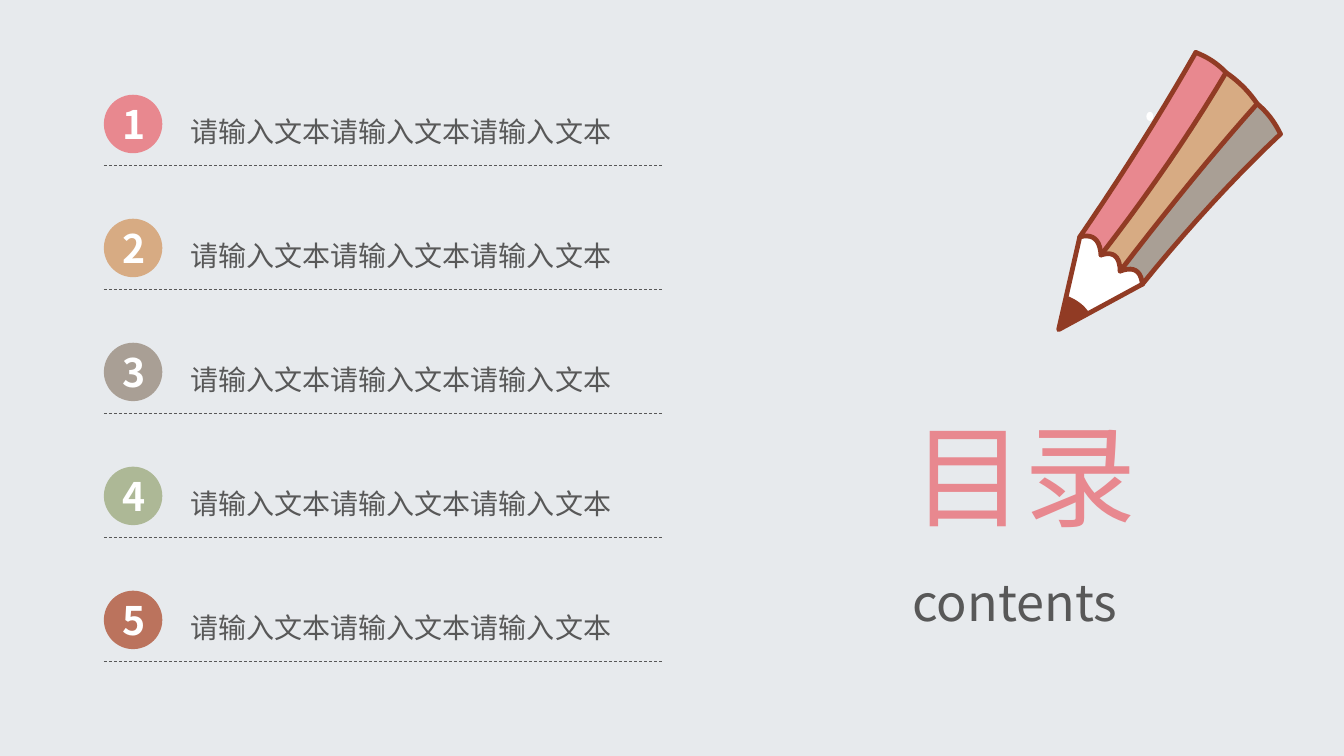
import pptx
import pptx.util
import pptx.dml.color
import pptx.enum.dml
import pptx.enum.shapes
import pptx.enum.text
import pptx.oxml
import pptx.oxml.ns

Inches, Pt = pptx.util.Inches, pptx.util.Pt
RGBColor = pptx.dml.color.RGBColor
PP_ALIGN = pptx.enum.text.PP_ALIGN
ANCHOR = pptx.enum.text.MSO_ANCHOR
OVAL = pptx.enum.shapes.MSO_SHAPE.OVAL

PINK = RGBColor(0xE8, 0x88, 0x8F)
TAN = RGBColor(0xD7, 0xAB, 0x83)
TAUPE = RGBColor(0xA9, 0x9F, 0x95)
SAGE = RGBColor(0xAD, 0xB8, 0x96)
BRICK = RGBColor(0xBB, 0x73, 0x5D)
BROWN = RGBColor(0x91, 0x3B, 0x24)
WHITE = RGBColor(0xFF, 0xFF, 0xFF)
GRAY = RGBColor(0x58, 0x58, 0x58)
PAPER = RGBColor(0xE7, 0xEA, 0xED)
FONT = "Noto Sans CJK SC"

# Content: headings are (text, top, height, size, colour)
headings = [("目录", 3.98, 1.45, 80, PINK), ("contents", 5.62, 0.71, 36, GRAY)]
entry_text = "请输入文本请输入文本请输入文本"
entry_colors = [PINK, TAN, TAUPE, SAGE, BRICK]

# Pencil: each long edge runs from foot through a bend to the end
side_colors = [PINK, TAN, TAUPE]
long_edges = [
    [(10.71, 2.35), (11.36, 1.4), (11.86, 0.52)],
    [(10.92, 2.53), (11.64, 1.6), (12.16, 0.72)],
    [(11.11, 2.69), (11.87, 1.7), (12.47, 1.03)],
    [(11.33, 2.82), (12.02, 1.97), (12.7, 1.33)],
]
tip = (10.5, 3.27)
lead_edge = [(10.57, 2.93), (10.73, 2.99), (10.8, 3.1)]
SCALLOP_BULGE = (0.09, -0.14)
CAP_BULGE = (0.03, -0.03)
OUTLINE_WIDTH = 3.4
CURVE_STEPS = 10

# Agenda layout
ROW_TOP, ROW_STEP = 0.94, 1.23
BADGE_LEFT, BADGE_SIZE = 1.03, 0.58
RULE_DROP, RULE_RIGHT = 0.7, 6.58


def write(frame, text, size, color, align, bold=False):
    frame.word_wrap = True
    paragraph = frame.paragraphs[0]
    paragraph.text = text
    paragraph.alignment = align
    font = paragraph.font
    font.size, font.bold = Pt(size), bold
    font.color.rgb = color
    font.name = FONT
    # East Asian glyphs need their own font entry
    defaults = paragraph._p.pPr.find(pptx.oxml.ns.qn("a:defRPr"))
    defaults.append(pptx.oxml.parse_xml(
        f'<a:ea {pptx.oxml.ns.nsdecls("a")} typeface="{FONT}"/>'))
    return paragraph


def add_text(slide, box, text, size, color):
    frame = slide.shapes.add_textbox(*map(Inches, box)).text_frame
    frame.auto_size = pptx.enum.text.MSO_AUTO_SIZE.SHAPE_TO_FIT_TEXT
    return frame, write(frame, text, size, color, PP_ALIGN.JUSTIFY)


def paint(shape, color):
    shape.shadow.inherit = False
    shape.fill.solid()
    shape.fill.fore_color.rgb = color
    shape.line.fill.background()


def add_entry(slide, number, top, text, color):
    frame, paragraph = add_text(slide, (1.79, top, 4.43, 0.55), text, 20, GRAY)
    frame.vertical_anchor = ANCHOR.MIDDLE
    paragraph.line_spacing = 1.5

    rule_y = Inches(top + RULE_DROP)
    rule = slide.shapes.add_connector(pptx.enum.shapes.MSO_CONNECTOR.STRAIGHT,
                                      Inches(BADGE_LEFT), rule_y, Inches(RULE_RIGHT), rule_y)
    rule.line.color.rgb = GRAY
    rule.line.width = Pt(0.5)
    rule.line.dash_style = pptx.enum.dml.MSO_LINE.DASH
    rule._element.spPr.append(pptx.oxml.parse_xml(
        f'<a:effectLst {pptx.oxml.ns.nsdecls("a")}/>'))

    badge = slide.shapes.add_shape(
        OVAL, *map(Inches, (BADGE_LEFT, top, BADGE_SIZE, BADGE_SIZE)))
    paint(badge, color)
    badge.text_frame.vertical_anchor = ANCHOR.MIDDLE
    write(badge.text_frame, str(number), 28, WHITE, PP_ALIGN.CENTER, bold=True)


def curve(start, bend, end):
    """Return points along a quadratic curve."""
    steps = [i / CURVE_STEPS for i in range(CURVE_STEPS + 1)]
    return [tuple((1 - t) ** 2 * a + 2 * t * (1 - t) * b + t * t * c
                  for a, b, c in zip(start, bend, end)) for t in steps]


def bulge(start, end, push):
    bend = [(a + b) / 2 + p for a, b, p in zip(start, end, push)]
    return curve(start, bend, end)


def add_outline(group, points, closed):
    start, *rest = [(Inches(x), Inches(y)) for x, y in points]
    builder = group.shapes.build_freeform(*start)
    builder.add_line_segments(rest, close=closed)
    return builder.convert_to_shape()


def add_stroke(group, points):
    stroke = add_outline(group, points, closed=False)
    stroke.shadow.inherit = False
    stroke.fill.background()
    stroke.line.color.rgb = BROWN
    stroke.line.width = Pt(OUTLINE_WIDTH)
    line = stroke._element.spPr.get_or_add_ln()
    line.set("cap", "rnd")
    line.append(pptx.oxml.parse_xml(f'<a:round {pptx.oxml.ns.nsdecls("a")}/>'))


def add_pencil(slide):
    group = slide.shapes.add_group_shape()
    edges = [curve(*edge) for edge in long_edges]
    pairs = list(zip(edges, edges[1:]))
    scallops = [bulge(a[0], b[0], SCALLOP_BULGE) for a, b in pairs]
    caps = [bulge(a[-1], b[-1], CAP_BULGE) for a, b in pairs]
    scalloped_edge, rounded_end = sum(scallops, []), sum(caps, [])

    highlight = group.shapes.add_shape(OVAL, *map(Inches, (11.37, 1.11, 0.07, 0.09)))
    paint(highlight, WHITE)

    # Wood, lead and coloured sides
    areas = [(WHITE, scalloped_edge + [tip]), (BROWN, curve(*lead_edge) + [tip])]
    for color, (left, right), scallop, cap in zip(side_colors, pairs, scallops, caps):
        areas.append((color, left + cap + right[::-1] + scallop[::-1]))
    for color, points in areas:
        paint(add_outline(group, points, closed=True), color)

    # Brown outlines
    tip_edges = [edges[0][0], tip, edges[-1][0]]
    for points in [*edges, scalloped_edge, tip_edges, rounded_end]:
        add_stroke(group, points)


def main():
    deck = pptx.Presentation()
    deck.slide_width, deck.slide_height = Inches(13.33), Inches(7.5)
    slide = deck.slides.add_slide(deck.slide_layouts[6])
    slide.background.fill.solid()
    slide.background.fill.fore_color.rgb = PAPER

    for text, top, height, size, color in headings:
        add_text(slide, (8.95, top, 3.24, height), text, size, color)
    for row, color in enumerate(entry_colors):
        add_entry(slide, row + 1, ROW_TOP + row * ROW_STEP, entry_text, color)
    add_pencil(slide)

    deck.save("out.pptx")


if __name__ == "__main__":
    main()
